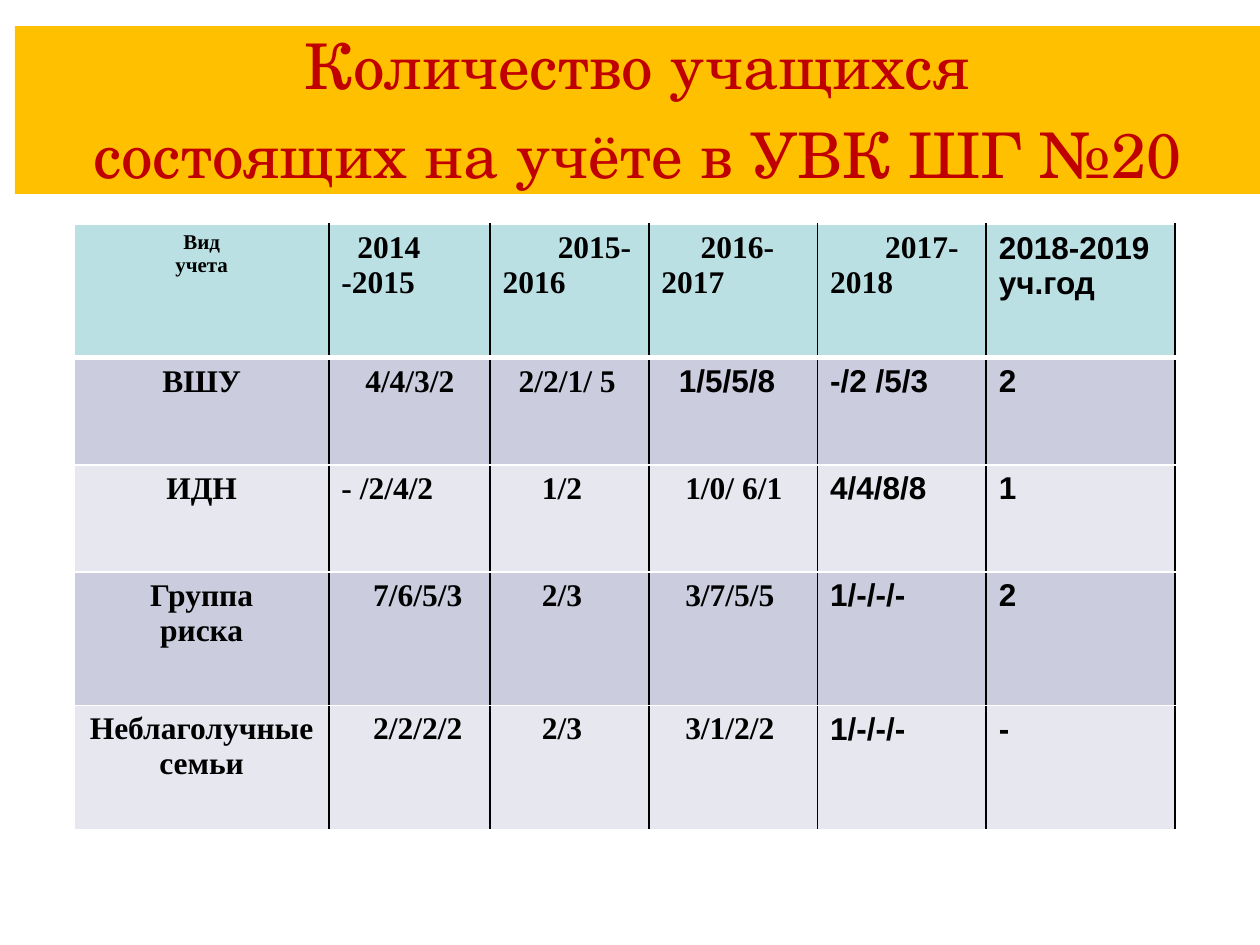
"""Build a slide with a table of registered pupils by school year."""
import pptx
import pptx.util
import pptx.dml.color
import pptx.enum.text
import pptx.oxml
import pptx.oxml.ns
from pptx.dml.color import RGBColor
from pptx.util import Cm

GOLD = RGBColor(0xFF, 0xC0, 0x00)
RED = RGBColor(0xC0, 0x00, 0x00)
BLACK = RGBColor(0x00, 0x00, 0x00)
WHITE = RGBColor(0xFF, 0xFF, 0xFF)
TEAL = RGBColor(0xBB, 0xE0, 0xE3)
LILAC = RGBColor(0xCB, 0xCD, 0xDE)
PALE = RGBColor(0xE7, 0xE8, 0xEF)

WIDTHS = [5.13, 3.25, 3.2, 3.4, 3.4, 3.81]
HEIGHTS = [2.69, 2.16, 2.16, 2.69, 2.51]
ROWS = [
    ["Вид\nучета", "2014 -2015", "2015-2016", "2016-2017", "2017-2018", "2018-2019 уч.год"],
    ["ВШУ", "4/4/3/2", "2/2/1/ 5", "1/5/5/8", "-/2 /5/3", "2"],
    ["ИДН", "- /2/4/2", "1/2", "1/0/ 6/1", "4/4/8/8", "1"],
    ["Группа\nриска", "7/6/5/3", "2/3", "3/7/5/5", "1/-/-/-", "2"],
    ["Неблаголучные\nсемьи", "2/2/2/2", "2/3", "3/1/2/2", "1/-/-/-", "-"],
]
INDENTS = [
    [0, 0.32, 1.11, 0.79, 1.11, 0],
    [0, 0.48, 0.32, 0.35, 0, 0],
    [0, 0, 0.79, 0.48, 0, 0],
    [0, 0.64, 0.79, 0.48, 0, 0],
    [0, 0.64, 0.79, 0.48, 0, 0],
]


class Deck:
    """Hold the text style and the current slide."""

    serif = "Times New Roman"
    sans = "Arial"
    script = "TeX Gyre Schola"
    center = pptx.enum.text.PP_ALIGN.CENTER

    def __init__(self):
        self.file = pptx.Presentation()
        self.file.slide_width = Cm(25.4)
        self.file.slide_height = Cm(19.05)
        self.slide = self.file.slides.add_slide(self.file.slide_layouts[5])

    def title(self, parts, left, top, width, height):
        """Fill the title placeholder with (text, font, size) parts."""
        box = self.slide.shapes.title
        box.left, box.top, box.width, box.height = map(Cm, (left, top, width, height))
        box.fill.solid()
        box.fill.fore_color.rgb = GOLD
        frame = box.text_frame
        frame.margin_left = frame.margin_right = 0
        frame.margin_top = frame.margin_bottom = 0
        frame.word_wrap = True
        frame.auto_size = pptx.enum.text.MSO_AUTO_SIZE.SHAPE_TO_FIT_TEXT
        para = frame.paragraphs[0]
        para.alignment = self.center
        para.font.color.rgb = RED
        for text, name, size in parts:
            if text == "\n":
                para.add_line_break()
                continue
            run = para.add_run()
            run.text = text
            run.font.name = name
            run.font.size = pptx.util.Pt(size)
            run.font.color.rgb = RED

    def border(self, cell, sides):
        """Draw cell borders from (side, colour, points), in schema order."""
        props = cell._tc.get_or_add_tcPr()
        for spot, (side, color, size) in enumerate(sides):
            line = pptx.oxml.parse_xml(
                f'<a:ln{side} {pptx.oxml.ns.nsdecls("a")} w="{size * 12700}">'
                f'<a:solidFill><a:srgbClr val="{color}"/></a:solidFill></a:ln{side}>'
            )
            props.insert(spot, line)

    def cell(self, cell, text, fill, name, size, indent, middle):
        """Fill one table cell with text."""
        cell.fill.solid()
        cell.fill.fore_color.rgb = fill
        cell.text = text
        for para in cell.text_frame.paragraphs:
            if middle:
                para.alignment = self.center
            if indent:
                para._p.get_or_add_pPr().set("indent", str(Cm(indent)))
            para.font.name = name
            para.font.size = pptx.util.Pt(size)
            para.font.bold = True
            para.font.color.rgb = BLACK

    def table(self, rows, left, top):
        """Add the table of pupils."""
        spots = map(Cm, (left, top, sum(WIDTHS), sum(HEIGHTS)))
        table = self.slide.shapes.add_table(len(rows), len(WIDTHS), *spots).table
        for col, width in zip(table.columns, WIDTHS):
            col.width = Cm(width)
        for row, height in zip(table.rows, HEIGHTS):
            row.height = Cm(height)
        for r, row in enumerate(rows):
            fill = TEAL if r == 0 else LILAC if r % 2 else PALE
            for c, text in enumerate(row):
                sans = c == 5 or (c == 4 and r > 0) or (r, c) == (1, 3)
                name = self.sans if sans else self.serif
                size = 12 if r == c == 0 else 18
                cell = table.cell(r, c)
                self.cell(cell, text, fill, name, size, INDENTS[r][c], c == 0)
                self.border(cell, [
                    ("L", BLACK if c else WHITE, 1),
                    ("R", BLACK, 1),
                    ("T", WHITE, 3 if r == 1 else 1),
                    ("B", WHITE, 3 if r == 0 else 1),
                ])

    def save(self):
        """Write the file."""
        self.file.save("out.pptx")


def main():
    """Build and save the slide."""
    deck = Deck()
    deck.title([
        ("Количество учащихся", deck.script, 36),
        ("\n", None, None),
        ("состоящих на учёте", deck.script, 36),
        (" ", "Calibri", 44),
        ("в УВК ШГ №20", deck.script, 36),
    ], 0.3, 0.53, 25.1, 3.38)
    deck.table(ROWS, 1.5, 4.52)
    deck.save()


if __name__ == "__main__":
    main()
